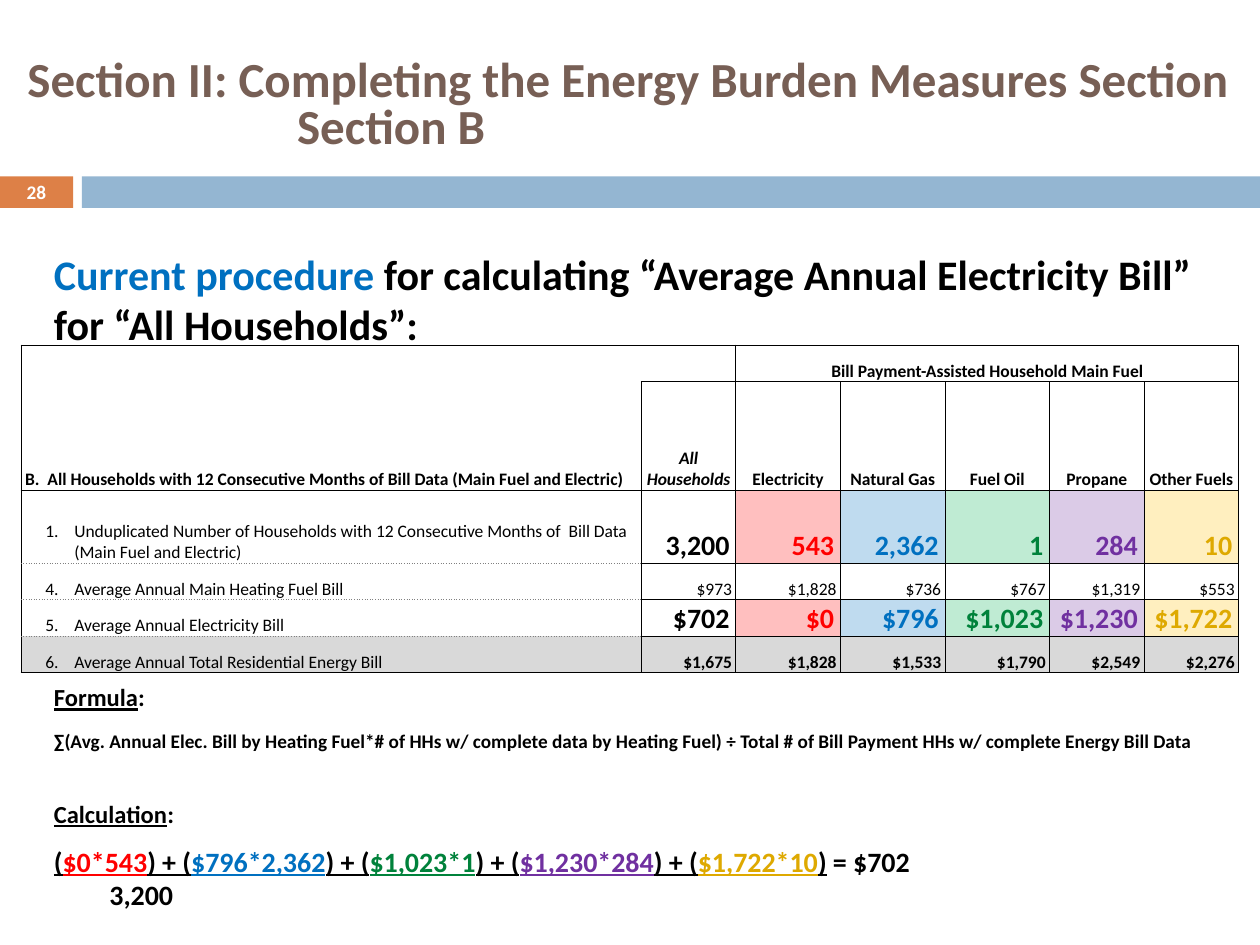
import pptx
import pptx.util
import pptx.dml.color
import pptx.enum.shapes
import pptx.enum.text
from lxml import etree

Inches = pptx.util.Inches
Pt = pptx.util.Pt
RGBColor = pptx.dml.color.RGBColor
ALIGN = pptx.enum.text.PP_ALIGN
ANCHOR = pptx.enum.text.MSO_ANCHOR
BLACK = RGBColor(0x00, 0x00, 0x00)
WHITE = RGBColor(0xFF, 0xFF, 0xFF)
BROWN = RGBColor(0x77, 0x5F, 0x55)
ORANGE = RGBColor(0xDD, 0x80, 0x47)
STEEL = RGBColor(0x94, 0xB6, 0xD2)
GREY = RGBColor(0xD9, 0xD9, 0xD9)
RED = RGBColor(0xFF, 0x00, 0x00)
BLUE = RGBColor(0x00, 0x70, 0xC0)
GREEN = RGBColor(0x00, 0x82, 0x3B)
PURPLE = RGBColor(0x70, 0x30, 0xA0)
GOLD = RGBColor(0xDE, 0xA9, 0x00)
PINK = RGBColor(0xFF, 0xBF, 0xBF)
SKY = RGBColor(0xBF, 0xDB, 0xEF)
MINT = RGBColor(0xBF, 0xEB, 0xD3)
LILAC = RGBColor(0xDB, 0xCB, 0xE7)
CREAM = RGBColor(0xFF, 0xEF, 0xBF)
NS = "http://schemas.openxmlformats.org/drawingml/2006/main"


def write(para, text, size, color=BLACK, bold=True, under=False):
    run = para.add_run()
    run.text = text
    font = run.font
    font.name = "Calibri"
    font.size = Pt(size)
    font.bold = bold
    font.underline = under
    font.color.rgb = color
    return run


def edge(cell, spot, side, width, color="000000", dash="solid"):
    line = etree.Element(f"{{{NS}}}ln{side}", w=str(int(Pt(width))))
    if width:
        fill = etree.SubElement(line, f"{{{NS}}}solidFill")
        etree.SubElement(fill, f"{{{NS}}}srgbClr", val=color)
        etree.SubElement(line, f"{{{NS}}}prstDash", val=dash)
    else:
        etree.SubElement(line, f"{{{NS}}}noFill")
    cell._tc.get_or_add_tcPr().insert(spot, line)


deck = pptx.Presentation()
deck.slide_width = Inches(10)
deck.slide_height = Inches(7.5)
slide = deck.slides.add_slide(deck.slide_layouts[6])
shapes = slide.shapes

for left, width, color, label in [(0, 0.58, ORANGE, "28"), (0.65, 9.35, STEEL, "")]:
    bar = shapes.add_shape(pptx.enum.shapes.MSO_SHAPE.RECTANGLE,
                           Inches(left), Inches(1.4), Inches(width), Inches(0.25))
    bar.shadow.inherit = False
    bar.fill.solid()
    bar.fill.fore_color.rgb = color
    bar.line.fill.background()
    if label:
        frame = bar.text_frame
        frame.margin_top = frame.margin_bottom = 0
        frame.vertical_anchor = ANCHOR.MIDDLE
        frame.paragraphs[0].alignment = ALIGN.CENTER
        write(frame.paragraphs[0], label, 11, WHITE)

frame = shapes.add_textbox(0, Inches(0.31), Inches(10), Inches(1.08)).text_frame
frame.word_wrap = True
frame.vertical_anchor = ANCHOR.MIDDLE
para = frame.paragraphs[0]
para.line_spacing = 0.8
props = para._p.get_or_add_pPr()
props.set("marL", str(Inches(2.26)))
props.set("indent", str(Inches(-2.14)))
write(para, "Section II: Completing the Energy Burden Measures Section Section B", 28, BROWN)

terms = [("$0*543", RED), ("$796*2,362", BLUE), ("$1,023*1", GREEN),
         ("$1,230*284", PURPLE), ("$1,722*10", GOLD)]
total = [("(", 16, BLACK, True)]
for spot, (term, color) in enumerate(terms):
    if spot:
        total.append((") + (", 16, BLACK, True))
    total.append((term, 16, color, True))
total += [(")", 16, BLACK, True), (" = $702", 16, BLACK, False)]

body = [
    (0, 0, [("Current procedure ", 24, BLUE, False),
            ("for calculating “Average Annual Electricity Bill” for “All Households”:",
             24, BLACK, False)]),
    (190.5, 0, [("Formula", 14, BLACK, True), (":", 14, BLACK, False)]),
    (9.8, 0, [("∑(Avg. Annual Elec. Bill by Heating Fuel*# of HHs w/ complete data by "
               "Heating Fuel) ÷ Total # of Bill Payment HHs w/ complete Energy Bill Data",
               11, BLACK, False)]),
    (26.8, 0, [("Calculation", 14, BLACK, True), (":", 14, BLACK, False)]),
    (9, 0, total),
    (0, 0.44, [("3,200", 16, BLACK, False)]),
]
frame = shapes.add_textbox(Inches(0.33), Inches(1.92), Inches(9.5), Inches(5.42)).text_frame
frame.word_wrap = True
for spot, (gap, inset, runs) in enumerate(body):
    para = frame.add_paragraph() if spot else frame.paragraphs[0]
    para.space_before = Pt(gap)
    para._p.get_or_add_pPr().set("marL", str(Inches(inset)))
    for text, size, color, under in runs:
        write(para, text, size, color, True, under)

rows = [
    ["", "", "Bill Payment-Assisted Household Main Fuel", "", "", "", ""],
    ["B.  All Households with 12 Consecutive Months of Bill Data (Main Fuel and Electric)",
     "All Households", "Electricity", "Natural Gas", "Fuel Oil", "Propane", "Other Fuels"],
    ["1.\tUnduplicated Number of Households with 12 Consecutive Months of  Bill Data "
     "(Main Fuel and Electric)", "3,200 ", "543 ", "2,362 ", "1 ", "284 ", "10 "],
    ["4.\tAverage Annual Main Heating Fuel Bill",
     "$973 ", "$1,828 ", "$736 ", "$767 ", "$1,319 ", "$553 "],
    ["5.\tAverage Annual Electricity Bill",
     "$702 ", "$0 ", "$796 ", "$1,023 ", "$1,230 ", "$1,722 "],
    ["6.\tAverage Annual Total Residential Energy Bill",
     "$1,675 ", "$1,828 ", "$1,533 ", "$1,790 ", "$2,549 ", "$2,276 "],
]
wide = [4.92, 0.75, 0.83, 0.83, 0.83, 0.75, 0.75]
high = [0.29, 0.86, 0.58, 0.29, 0.29, 0.29]
inks = [BLACK, BLACK, RED, BLUE, GREEN, PURPLE, GOLD]
tints = [None, None, PINK, SKY, MINT, LILAC, CREAM]
table = shapes.add_table(6, 7, Inches(0.17), Inches(2.74),
                         Inches(sum(wide)), Inches(sum(high))).table
table.first_row = False
table.horz_banding = False
for col, width in zip(table.columns, wide):
    col.width = Inches(width)
for row, height in zip(table.rows, high):
    row.height = Inches(height)
table.cell(0, 2).merge(table.cell(0, 6))

for r, row in enumerate(rows):
    for c, text in enumerate(row):
        cell = table.cell(r, c)
        cell.margin_left = cell.margin_right = cell.margin_top = cell.margin_bottom = 0
        cell.vertical_anchor = ANCHOR.BOTTOM
        big = r in (2, 4) and c > 0
        tint = GREY if r == 5 else tints[c] if big else None
        if tint:
            cell.fill.solid()
            cell.fill.fore_color.rgb = tint
        else:
            cell.fill.background()
        para = cell.text_frame.paragraphs[0]
        if c == 0 and r > 1:
            props = para._p.get_or_add_pPr()
            props.set("marL", str(Inches(0.42)))
            props.set("indent", str(Inches(-0.23)))
        elif c == 0:
            cell.margin_left = Inches(0.03)
        else:
            para.alignment = ALIGN.CENTER if r < 2 else ALIGN.RIGHT
        if text:
            bold = r < 2 or big or (r == 5 and c > 0)
            run = write(para, text, 16 if big else 10, inks[c] if big else BLACK, bold)
            run.font.italic = (r, c) == (1, 1)
        else:
            etree.SubElement(para._p, f"{{{NS}}}endParaRPr", sz="1000")
        dots = (0.75, "808080", "sysDot")
        top = (1,) if r == 0 else (0.5,)
        foot = (1,) if r == 5 else (0.5,)
        if c == 0:
            top = (0,) if r == 1 else dots if r > 2 else top
            foot = (0,) if r == 0 else dots if 1 < r < 5 else foot
        start = 1 if c == 0 else 0 if (r, c) == (0, 1) else 0.5
        end = 1 if c == 6 else 0 if (r, c) == (0, 0) else 0.5
        if r == 0 and c == 2:
            end = 1
        for spot, (side, line) in enumerate(
                [("L", (start,)), ("R", (end,)), ("T", top), ("B", foot)]):
            edge(cell, spot, side, *line)

deck.save("out.pptx")
